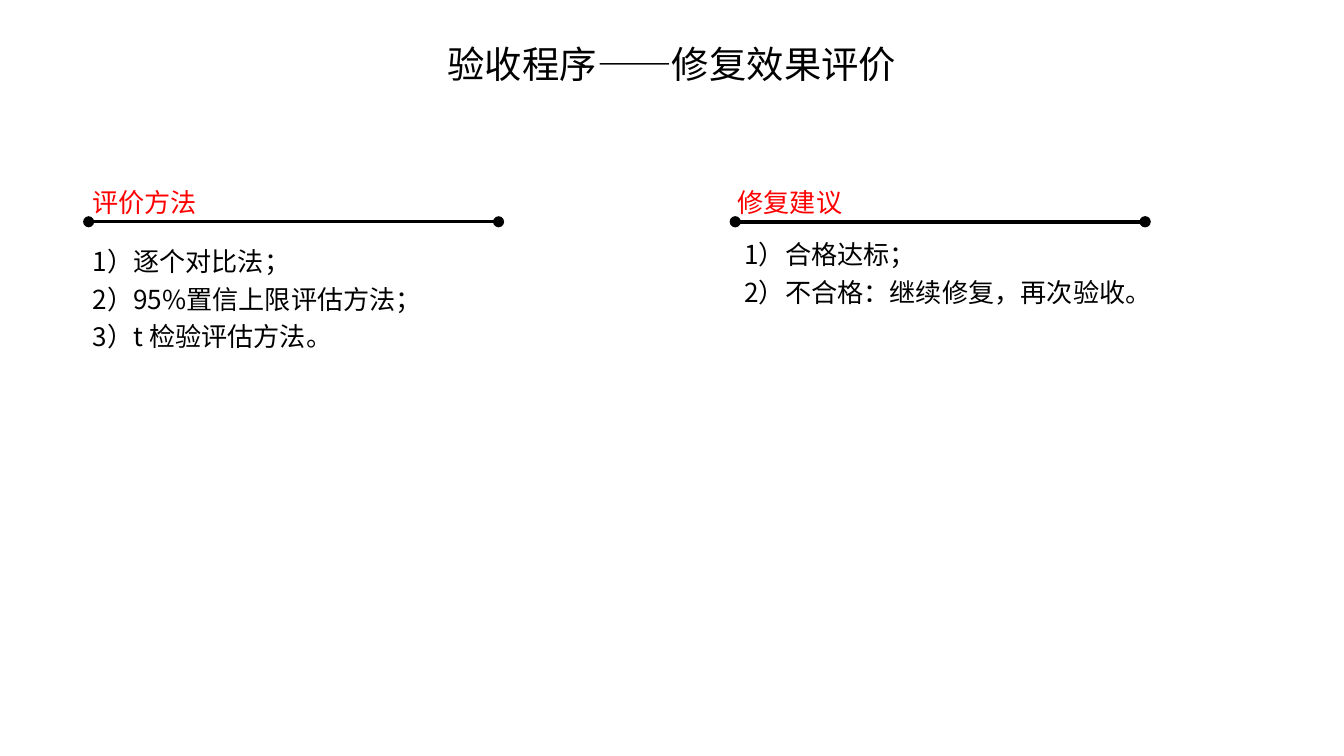
from lxml import etree
from pptx import Presentation
from pptx.dml.color import RGBColor
from pptx.enum import shapes, text
from pptx.oxml import ns
from pptx.util import Pt

FONT = "Noto Sans CJK SC"
BLACK = RGBColor(0, 0, 0)
RED = RGBColor(255, 0, 0)
WHITE = RGBColor(255, 255, 255)


def add_text(slide, box, lines, size=14, color=BLACK, spacing=1.0,
             align=text.PP_ALIGN.LEFT, anchor=text.MSO_ANCHOR.TOP,
             auto_size=text.MSO_AUTO_SIZE.SHAPE_TO_FIT_TEXT):
    """Add a text box with one paragraph per line; box is in points."""
    frame = slide.shapes.add_textbox(*map(Pt, box)).text_frame
    frame.word_wrap = True
    frame.auto_size = auto_size
    frame.vertical_anchor = anchor
    for index, line in enumerate(lines):
        paragraph = frame.paragraphs[0] if index == 0 else frame.add_paragraph()
        paragraph.alignment = align
        paragraph.line_spacing = spacing
        run = paragraph.add_run()
        run.text = line
        run.font.size = Pt(size)
        run.font.name = FONT
        run.font.color.rgb = color
        # East Asian characters take their font from a separate element
        latin = run.font._element.find(ns.qn("a:latin"))
        east_asian = etree.Element(ns.qn("a:ea"), typeface=FONT)
        latin.addnext(east_asian)


def add_dotted_rule(slide, left, top, width, weight):
    """Add a horizontal line with a round dot at each end."""
    rule = slide.shapes.add_connector(
        shapes.MSO_CONNECTOR.STRAIGHT,
        Pt(left), Pt(top), Pt(left + width), Pt(top))
    rule.line.color.rgb = BLACK
    rule.line.width = Pt(weight)
    line = rule.line._get_or_add_ln()
    for end in ("a:headEnd", "a:tailEnd"):
        etree.SubElement(line, ns.qn(end), type="oval")
    etree.SubElement(rule._element.spPr, ns.qn("a:effectLst"))


def add_title(slide, box, title):
    add_text(slide, box, [title], size=20, align=text.PP_ALIGN.CENTER,
             anchor=text.MSO_ANCHOR.MIDDLE, auto_size=text.MSO_AUTO_SIZE.NONE)


def add_section(slide, box, heading, items, weight, rule_inset, body_offset):
    """Add a red heading, a rule below it and the numbered items."""
    left, top, width, height = box
    body_left, body_top = body_offset
    add_text(slide, (left, top, 230, 24.5), [heading], color=RED)
    add_dotted_rule(slide, left + rule_inset, top + 22.3, 219.6, weight)
    add_text(slide,
             (left + body_left, top + body_top,
              width - body_left, height - body_top),
             items, spacing=1.2)


def main():
    presentation = Presentation()
    presentation.slide_width = Pt(720)
    presentation.slide_height = Pt(405)
    slide = presentation.slides.add_slide(presentation.slide_layouts[6])
    slide.background.fill.solid()
    slide.background.fill.fore_color.rgb = WHITE

    add_title(slide, (36, 13.7, 648, 40.3), "验收程序——修复效果评价")

    # Left column: evaluation methods
    add_section(slide, (42.5, 96.5, 244.8, 96.5), "评价方法",
                ["1）逐个对比法；", "2）95%置信上限评估方法；", "3）t 检验评估方法。"],
                weight=1.75, rule_inset=5, body_offset=(0, 28.1))

    # Right column: remediation advice
    add_section(slide, (388.1, 96.5, 295.9, 72.7), "修复建议",
                ["1）合格达标；", "2）不合格：继续修复，再次验收。"],
                weight=2, rule_inset=5.8, body_offset=(3.6, 24.5))

    presentation.save("out.pptx")


if __name__ == "__main__":
    main()
